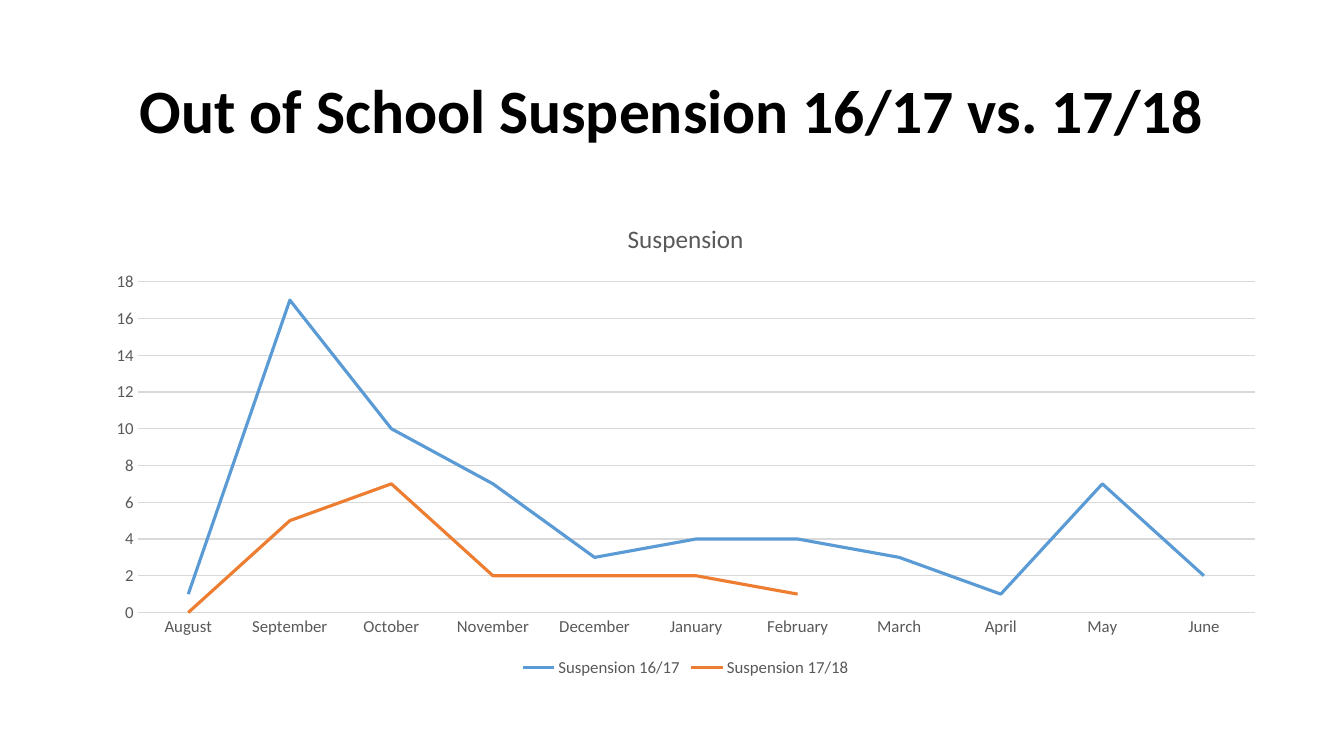
from pptx import Presentation
from pptx.chart.data import CategoryChartData as ChartData
from pptx.dml.color import RGBColor as Color
from pptx.enum.chart import XL_CHART_TYPE as ChartType
from pptx.enum.chart import XL_LEGEND_POSITION as LegendSpot
from pptx.enum.chart import XL_TICK_MARK as TickMark
from pptx.enum.text import MSO_ANCHOR as Anchor
from pptx.enum.text import PP_ALIGN as Align
from pptx.util import Emu, Pt

PX = 9144
COLORS = {
    "title": "000000",
    "label": "595959",
    "grid": "D9D9D9",
    "Suspension 16/17": "5B9BD5",
    "Suspension 17/18": "ED7D31",
}
MONTHS = ["August", "September", "October", "November", "December", "January",
          "February", "March", "April", "May", "June"]
SUSPENSIONS = {
    "Suspension 16/17": [1, 17, 10, 7, 3, 4, 4, 3, 1, 7, 2],
    "Suspension 17/18": [0, 5, 7, 2, 2, 2, 1, None, None, None, None],
}


class SlideBuilder:
    """Holds the style and the current slide, and adds elements to it."""

    font_name = "Calibri"

    def __init__(self, deck):
        self.page = deck.slides.add_slide(deck.slide_layouts[5])

    def style_font(self, font, size, color, bold=False):
        font.name = self.font_name
        font.size = Pt(size)
        font.bold = bold
        font.color.rgb = Color.from_string(COLORS[color])

    def style_line(self, line, width, color):
        line.width = Pt(width)
        line.color.rgb = Color.from_string(COLORS[color])

    def add_title(self, text, left, top, width, height):
        box = self.page.shapes.title
        box.left, box.top = Emu(left * PX), Emu(top * PX)
        box.width, box.height = Emu(width * PX), Emu(height * PX)
        frame = box.text_frame
        frame.text = text
        frame.vertical_anchor = Anchor.MIDDLE
        para = frame.paragraphs[0]
        para.alignment = Align.CENTER
        para.line_spacing = 0.9
        self.style_font(para.runs[0].font, 44, "title", bold=True)

    def add_line_chart(self, heading, months, series, left, top, width, height):
        data = ChartData()
        data.categories = months
        for name, values in series.items():
            data.add_series(name, values)
        bounds = [Emu(length * PX) for length in (left, top, width, height)]
        chart = self.page.shapes.add_chart(ChartType.LINE, *bounds, data).chart
        self.style_font(chart.font, 12, "label")

        chart.has_title = True
        frame = chart.chart_title.text_frame
        frame.text = heading
        self.style_font(frame.paragraphs[0].runs[0].font, 18, "label")
        chart.chart_title.include_in_layout = False

        chart.has_legend = True
        chart.legend.position = LegendSpot.BOTTOM
        chart.legend.include_in_layout = False
        self.style_font(chart.legend.font, 12, "label")

        for axis in (chart.category_axis, chart.value_axis):
            axis.major_tick_mark = TickMark.NONE
            axis.minor_tick_mark = TickMark.NONE
            self.style_font(axis.tick_labels.font, 12, "label")
        self.style_line(chart.category_axis.format.line, 0.75, "grid")
        chart.value_axis.format.line.fill.background()
        chart.value_axis.minimum_scale = 0
        chart.value_axis.maximum_scale = 18
        chart.value_axis.major_unit = 2
        self.style_line(chart.value_axis.major_gridlines.format.line, 0.75, "grid")

        plot = chart.plots[0]
        plot.vary_by_categories = False
        for line in plot.series:
            line.smooth = False
            self.style_line(line.format.line, 2.25, line.name)


def main():
    deck = Presentation()
    deck.slide_width, deck.slide_height = Emu(1333 * PX), Emu(750 * PX)
    builder = SlideBuilder(deck)
    builder.add_title("Out of School Suspension 16/17 vs. 17/18", 92, 40, 1150, 145)
    builder.add_line_chart("Suspension", MONTHS, SUSPENSIONS, 92, 200, 1176, 476)
    deck.save("out.pptx")


if __name__ == "__main__":
    main()
